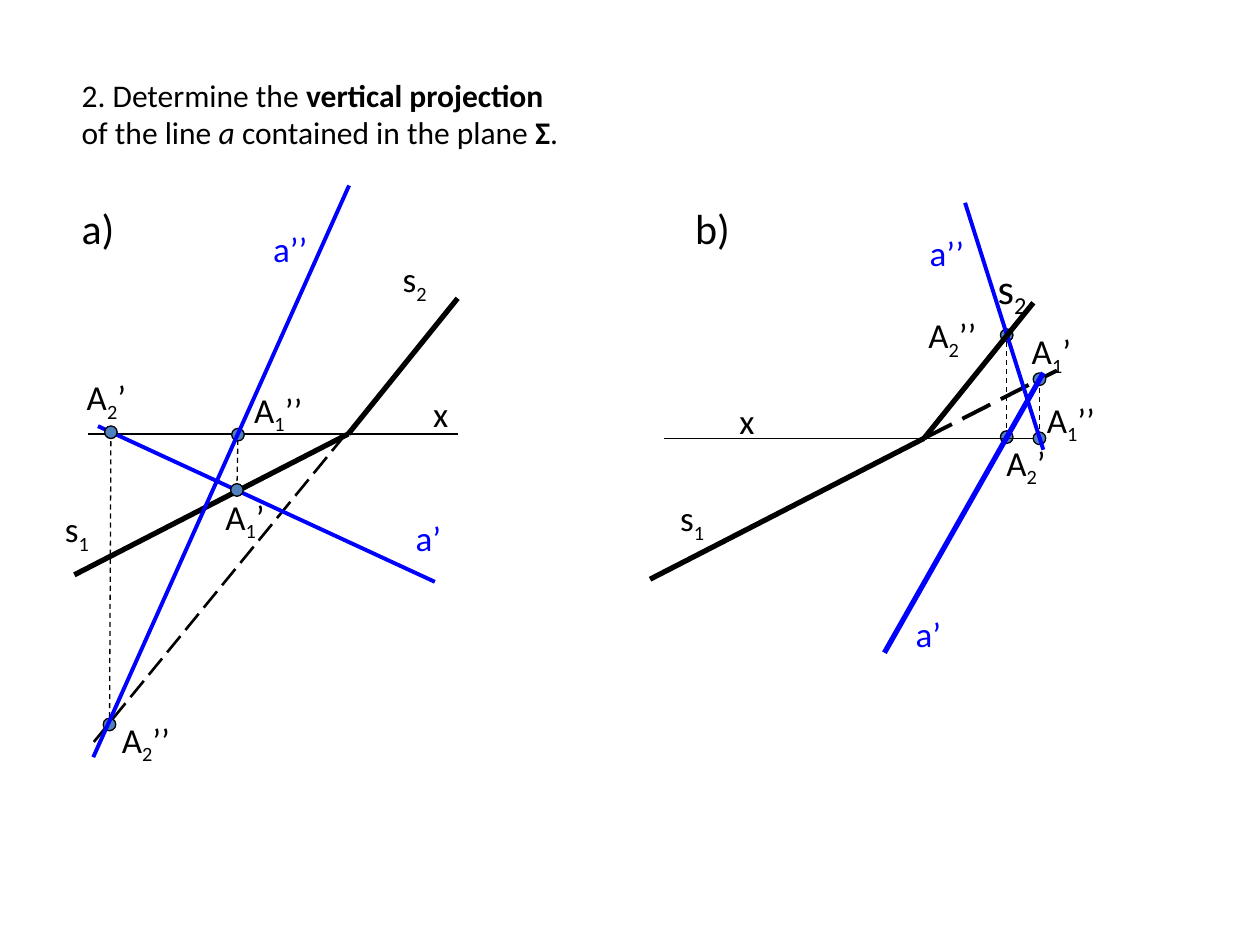
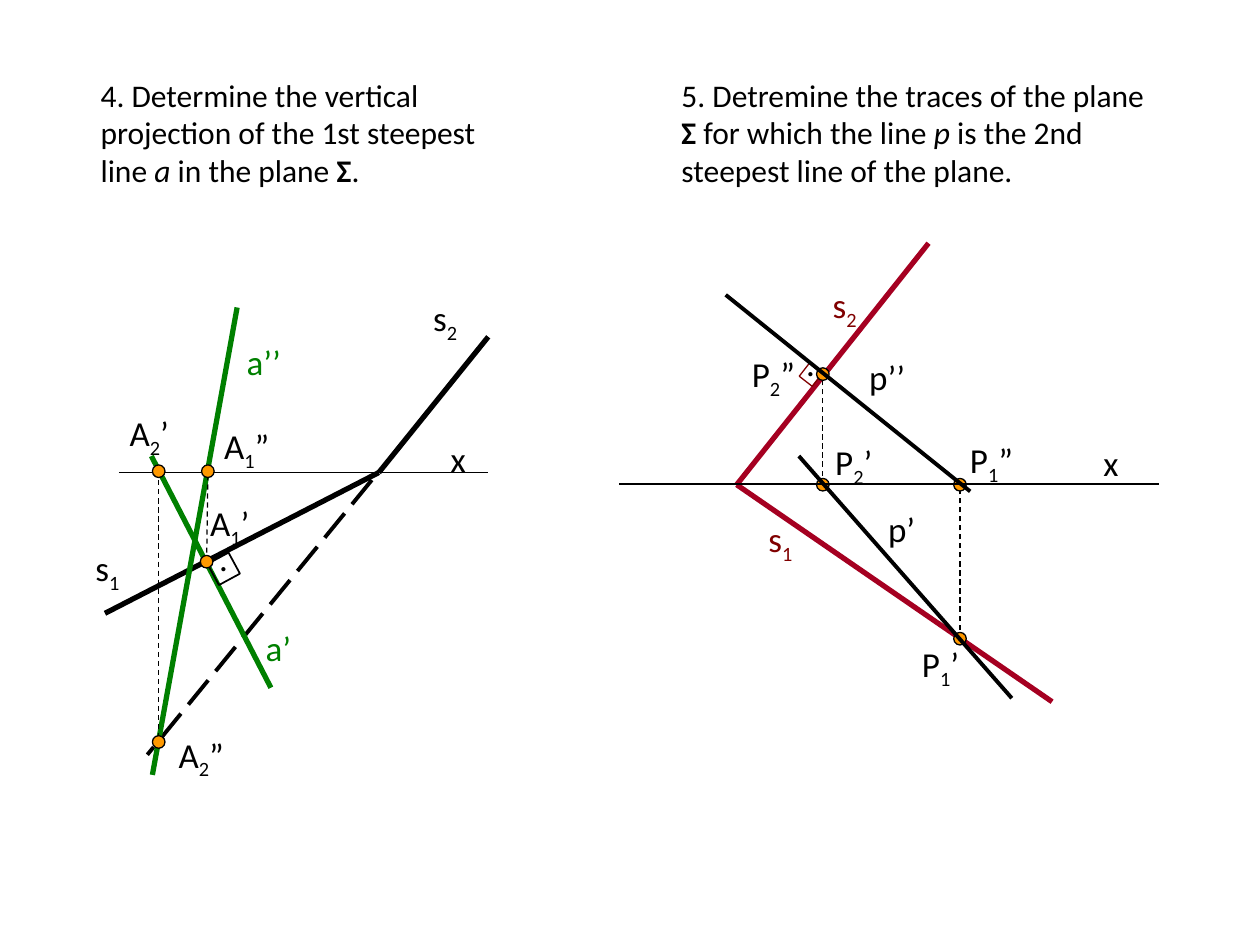
from dataclasses import dataclass

from lxml.etree import SubElement
from pptx import Presentation
from pptx.dml.color import RGBColor
from pptx.enum.dml import MSO_LINE
from pptx.enum.shapes import MSO_CONNECTOR, MSO_SHAPE
from pptx.oxml.ns import qn
from pptx.util import Pt


@dataclass(frozen=True)
class Theme:
    font: str = "Calibri"
    ink: str = "000000"
    blue: str = "0000FF"
    green: str = "008000"
    crimson: str = "A50021"
    maroon: str = "800000"
    blue_dot: str = "4F81BD"
    orange_dot: str = "FF9900"
    heading: float = 18
    label: float = 20
    tag: float = 24
    thin: float = 0.75
    square: float = 1
    hidden: float = 1.5
    line: float = 2.25
    trace: float = 3
    dot: float = 7.2


T = Theme()


class Sketch:
    """Draws on a slide; every position is in points from the box corner."""

    def __init__(self, slide, left, top):
        self.shapes, self.left, self.top = slide.shapes, left, top

    def at(self, x, y):
        return Pt(self.left + x), Pt(self.top + y)

    def line(self, start, end, width=T.line, color=T.ink, dash=None):
        ln = self.shapes.add_connector(MSO_CONNECTOR.STRAIGHT, *self.at(*start), *self.at(*end))
        ln.line.width = Pt(width)
        ln.line.color.rgb = RGBColor.from_string(color)
        if dash:
            ln.line.dash_style = dash
        SubElement(ln._element.spPr, qn("a:effectLst"))

    def hidden_trace(self, start, end, width=T.line):
        self.line(start, end, width, dash=MSO_LINE.LONG_DASH)

    def shape(self, kind, x, y, size, width, color, fill=None):
        sp = self.shapes.add_shape(kind, *self.at(x, y), Pt(size), Pt(size))
        sp.shadow.inherit = False
        sp.line.width = Pt(width)
        sp.line.color.rgb = RGBColor.from_string(color)
        if fill:
            sp.fill.solid()
            sp.fill.fore_color.rgb = RGBColor.from_string(fill)
        else:
            sp.fill.background()
        return sp

    def text(self, x, y, width, height, size, color=T.ink):
        """Adds an empty text box and returns its paragraph."""
        tf = self.shapes.add_textbox(*self.at(x, y), Pt(width), Pt(height)).text_frame
        tf.word_wrap = True
        p = tf.paragraphs[0]
        p.font.name, p.font.size = T.font, Pt(size)
        p.font.color.rgb = RGBColor.from_string(color)
        return p

    def label(self, text, x, y, color=T.ink, size=T.label):
        """Writes a symbol; its digits become subscripts."""
        p = self.text(x, y, 56, 31.5, size, color)
        for char in text:
            r = p.add_run()
            r.text = char
            if char.isdigit():
                r._r.get_or_add_rPr().set("baseline", "-25000")

    def projections(self, fill, *pairs):
        """Each pair holds two (name, centre, label corner) on one projector."""
        for pair in pairs:
            self.line(*(centre for _, centre, _ in pair), T.thin, dash=MSO_LINE.DASH)
            for name, (x, y), corner in pair:
                self.shape(MSO_SHAPE.OVAL, x - T.dot / 2, y - T.dot / 2, T.dot, T.thin, T.ink, fill)
                self.label(name, *corner)

    def right_angle(self, x, y, size, turn, width, color, dot):
        self.shape(MSO_SHAPE.RECTANGLE, x, y, size, width, color).rotation = turn
        self.label(".", *dot)

    def plane(self, s1, s2, x, s2_size=T.label):
        """Axis and both traces of the plane, given the label corners."""
        vertex = (160, 160)
        self.line((11.5, 160), (222.5, 160), T.thin)
        self.line((222.5, 82.5), vertex, T.trace)
        self.line(vertex, (3.5, 240.5), T.trace)
        self.label("s1", *s1)
        self.label("s2", *s2, size=s2_size)
        self.label("x", *x)


def heading(slide, left, width, height, *runs):
    """Each run is (text, style), where style is "", "b" or "i"."""
    p = Sketch(slide, left, 39.6).text(0, 0, width, height, T.heading)
    for text, style in runs:
        r = p.add_run()
        r.text = text
        r.font.bold, r.font.italic = style == "b", style == "i"


def exercise_2a(slide, left, top):
    sk = Sketch(slide, left, top)
    sk.label("a)", 0.6, 24.3, size=T.tag)
    sk.plane(s1=(-9, 198.6), s2=(184, 55.5), x=(201.5, 133))
    sk.hidden_trace((158.3, 160.4), (12.8, 338.2), T.hidden)
    sk.line((17, 155.5), (209.5, 244.5), color=T.blue)
    sk.projections(
        T.blue_dot,
        [("A1’", (96.4, 192), (82.7, 191.4)), ("A1’’", (97, 160.4), (99.2, 130.2))],
        [("A2’", (24.4, 159), (3.5, 123)), ("A2’’", (23.6, 326), (23.6, 318.8))],
    )
    sk.line((14.3, 344.7), (160.5, 18), color=T.blue)
    sk.label("a’", 191.4, 203.6, T.blue)
    sk.label("a’’", 110, 38.7, T.blue)


def exercise_2b(slide, left, top):
    sk = Sketch(slide, left, top)
    sk.label("b)", 22.2, 21.8, size=T.tag)
    sk.hidden_trace((160, 160), (236, 121.2))
    sk.projections(
        T.blue_dot,
        [("A2’", (207.3, 159.3), (200, 158)), ("A2’’", (207.3, 101), (155.4, 85.2))],
        [("A1’", (226, 126.2), (214.5, 94.5)), ("A1’’", (226, 160), (223.1, 133.4))],
    )
    sk.line((183.5, 25.4), (228.2, 166.5), color=T.blue)
    sk.plane(s1=(13.6, 189.6), s2=(195, 55.7), x=(47.4, 134), s2_size=T.tag)
    sk.line((228.2, 122.6), (137.4, 282.5), T.trace, T.blue)
    sk.label("a’", 148.2, 255.8, T.blue)
    sk.label("a’’", 156.2, 38.4, T.blue)


def exercise_4(slide, left, top):
    sk = Sketch(slide, left, top)
    sk.plane(s1=(-9, 198.6), s2=(184, 56), x=(194, 136.2))
    sk.hidden_trace((156, 164.3), (27.7, 321.3))
    sk.line((30, 150.6), (98.3, 283), T.trace, T.green)
    sk.line((30.6, 332.8), (79, 65.7), T.trace, T.green)
    sk.label("a’", 88.2, 244.2, T.green)
    sk.label("a’’", 77.4, 80.8, T.green)
    sk.right_angle(64.5, 208.2, 13.7, 331.5, T.square, T.ink, dot=(61.6, 193))
    sk.projections(
        T.orange_dot,
        [("A1’", (61.6, 211), (56.5, 173)), ("A1”", (62.3, 159.3), (64.5, 129))],
        [("A2’", (34.2, 159.3), (10.5, 121.8)), ("A2”", (34.2, 314), (38.5, 305.4))],
    )


def exercise_5(slide, left, top):
    sk = Sketch(slide, left, top)
    vertex = (67, 140)
    sk.line(vertex, (247.2, 264), T.trace, T.crimson)
    sk.line(vertex, (176.6, 2), T.trace, T.crimson)
    sk.label("s1", 78, 155.3, T.maroon)
    sk.label("s2", 114.7, 21.4, T.maroon)
    sk.right_angle(104.6, 72.5, 9.4, 37.9, T.thin, T.maroon, dot=(99.6, 54.5))
    sk.projections(
        T.orange_dot,
        [("P1’", (194.6, 228), (165.8, 226.6)), ("P1”", (194.6, 140), (193.2, 110))],
        [("P2’", (116.2, 140), (116.2, 111.4)), ("P2”", (116.2, 76.8), (68.6, 61))],
    )
    sk.line((0, 139.6), (308.4, 139.6), T.thin)
    sk.line((102.5, 123.6), (224.2, 262))
    sk.line((60.7, 31.5), (200.4, 143.8))
    sk.label("p’", 146.4, 149.6)
    sk.label("p’’", 135.6, 62.4)
    sk.label("x", 269.5, 112)


def main():
    prs = Presentation()
    prs.slide_width, prs.slide_height = Pt(720), Pt(540)
    blank = prs.slide_layouts[6]

    slide = prs.slides.add_slide(blank)
    heading(slide, 39.6, 297, 51, ("2. Determine the ", ""), ("vertical projection ", "b"),
            ("of the line ", ""), ("a ", "i"), ("contained in the plane ", ""),
            ("Σ", "b"), (".", ""))
    exercise_2a(slide, 39, 88)
    exercise_2b(slide, 368, 90.5)

    slide = prs.slides.add_slide(blank)
    heading(slide, 50.4, 258.5, 73,
            ("4. Determine the vertical projection of the 1st steepest line ", ""),
            ("a ", "i"), ("in the plane ", ""), ("Σ", "b"), (".", ""))
    exercise_4(slide, 56.5, 110)
    heading(slide, 382.3, 281.5, 73, ("5. Detremine the traces of the plane ", ""),
            ("Σ", "b"), (" for which the line ", ""), ("p", "i"),
            (" is the 2nd steepest line of the plane.", ""))
    exercise_5(slide, 354, 137)

    prs.save("out.pptx")


if __name__ == "__main__":
    main()
